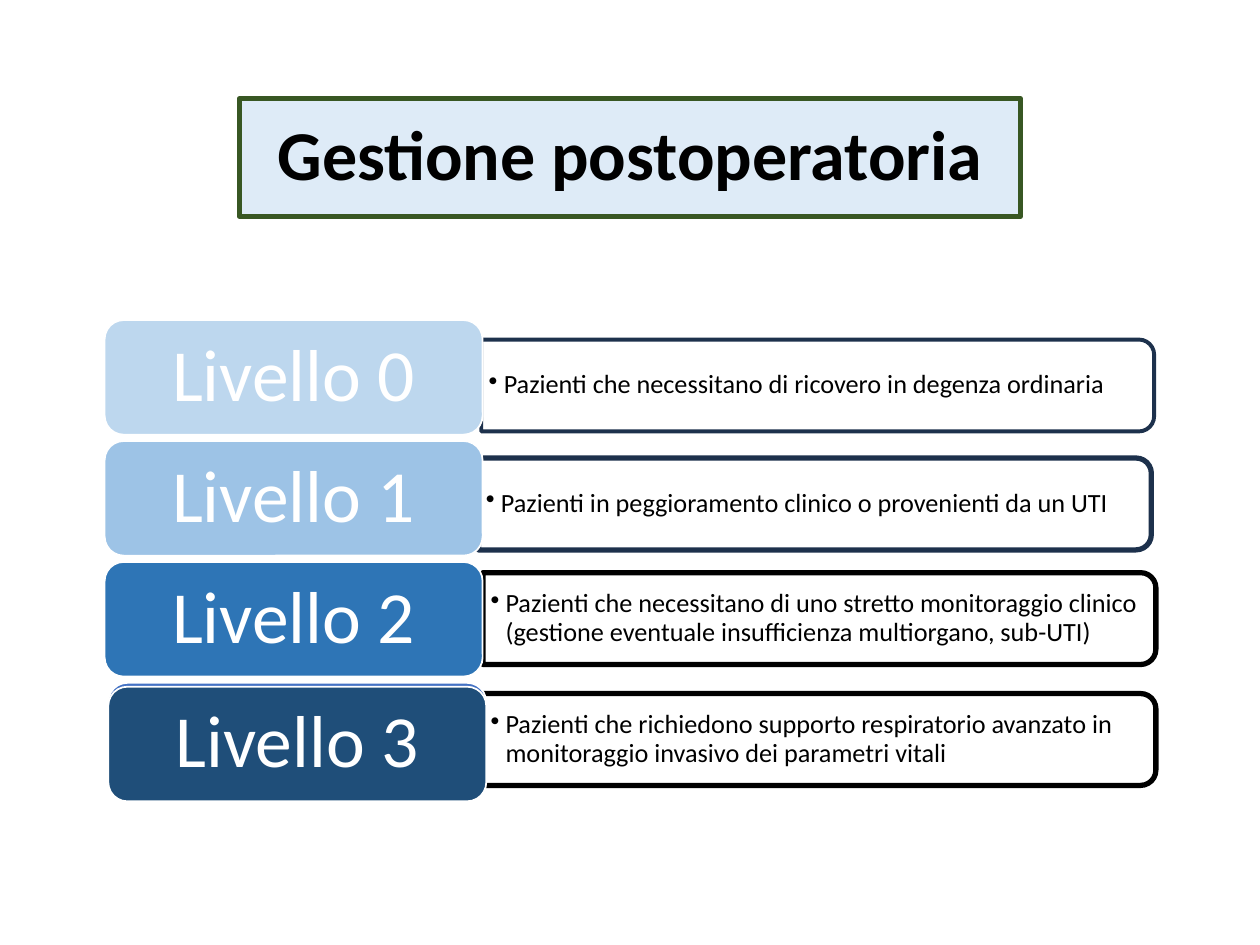
from lxml import etree
from pptx import Presentation
from pptx.dml.color import RGBColor
from pptx.enum.shapes import MSO_SHAPE
from pptx.enum.text import MSO_ANCHOR, MSO_AUTO_SIZE, PP_ALIGN
from pptx.oxml.ns import qn
from pptx.util import Pt

ROUNDED = MSO_SHAPE.ROUNDED_RECTANGLE
ROUND_TOP = MSO_SHAPE.ROUND_2_SAME_RECTANGLE
MIDDLE = MSO_ANCHOR.MIDDLE
NO_AUTOFIT = MSO_AUTO_SIZE.NONE
LEFT, CENTER = PP_ALIGN.LEFT, PP_ALIGN.CENTER

TITLE_ONLY = 5
BAR_WIDTH, BAR_HEIGHT = 384.5, 52.5
TEXT_WIDTH, TEXT_HEIGHT = 381.6, 47.5
LABEL_WIDTH, LABEL_HEIGHT = 216, 65.5

# Label, label left, top and fill; bar left, middle, line colour and width; text
LEVELS = [
    ("Livello 0", 59.8, 182.9, "BDD7EE", 275, 220.3, "1D314C", 2.25,
     "Pazienti che necessitano di ricovero in degenza ordinaria"),
    ("Livello 1", 59.8, 252, "9DC3E6", 273.4, 288, "1D314C", 3,
     "Pazienti in peggioramento clinico o provenienti da un UTI"),
    ("Livello 2", 59.8, 321.1, "2E75B6", 276, 353.5, "000000", 3,
     "Pazienti che necessitano di uno stretto monitoraggio clinico "
     "(gestione eventuale insufficienza multiorgano, sub-UTI)"),
    ("Livello 3", 61.9, 392.4, "1F4E79", 276, 422.6, "000000", 3,
     "Pazienti che richiedono supporto respiratorio avanzato in "
     "monitoraggio invasivo dei parametri vitali"),
]


def color(value):
    return RGBColor.from_string(value)


def write(shape, text, size=15, fill="000000", bold=False, align=LEFT,
          margins=(4.3, 2.2), bullet=False):
    frame = shape.text_frame
    frame.word_wrap = True
    frame.auto_size = NO_AUTOFIT
    frame.vertical_anchor = MIDDLE
    frame.margin_left = frame.margin_right = Pt(margins[0])
    frame.margin_top = frame.margin_bottom = Pt(margins[1])
    para = frame.paragraphs[0]
    para.alignment = align
    para.line_spacing = 0.9
    if bullet:
        properties = para._p.get_or_add_pPr()
        properties.set("marL", str(Pt(8.6)))
        properties.set("indent", str(Pt(-8.6)))
        etree.SubElement(properties, qn("a:buChar")).set("char", "•")
    span = para.add_run()
    span.text = text
    font = span.font
    font.name, font.size, font.bold = "Calibri", Pt(size), bold
    font.color.rgb = color(fill)


class LevelSlide:
    def __init__(self, page):
        self.page = page

    def paint(self, shape, fill, line, weight):
        if fill:
            shape.fill.solid()
            shape.fill.fore_color.rgb = color(fill)
        else:
            shape.fill.background()
        shape.line.color.rgb = color(line)
        shape.line.width = Pt(weight)

    def shape(self, kind, left, top, width, height, fill, line, weight):
        shape = self.page.shapes.add_shape(
            kind, Pt(left), Pt(top), Pt(width), Pt(height))
        shape.shadow.inherit = False
        self.paint(shape, fill, line, weight)
        return shape

    def title(self, text, left, top, width, height):
        box = self.page.shapes.title
        box.left, box.top = Pt(left), Pt(top)
        box.width, box.height = Pt(width), Pt(height)
        self.paint(box, "DEEBF7", "385723", 3)
        write(box, text, size=40, bold=True, align=CENTER, margins=(7.2, 3.6))

    def bar(self, left, middle, line, weight):
        # Upright shape turned a quarter, so its round corners face right
        bar = self.shape(ROUND_TOP, left + (BAR_WIDTH - BAR_HEIGHT) / 2,
                         middle - BAR_WIDTH / 2, BAR_HEIGHT, BAR_WIDTH,
                         None, line, weight)
        bar.rotation = 90

    def description(self, text, left, middle):
        box = self.page.shapes.add_textbox(
            Pt(left), Pt(middle - TEXT_HEIGHT / 2),
            Pt(TEXT_WIDTH), Pt(TEXT_HEIGHT))
        write(box, text, bullet=True)

    def label(self, left, top, fill, text=None):
        label = self.shape(ROUNDED, left, top, LABEL_WIDTH, LABEL_HEIGHT,
                           fill, "FFFFFF", 1)
        if text:
            write(label, text, size=42, fill="FFFFFF", align=CENTER,
                  margins=(15, 9))


def main():
    deck = Presentation()
    deck.slide_width, deck.slide_height = Pt(720), Pt(540)
    slide = LevelSlide(deck.slides.add_slide(deck.slide_layouts[TITLE_ONLY]))

    # Title
    slide.title("Gestione postoperatoria", 136.8, 56.4, 446.4, 67.2)

    # Care levels
    for (name, left, top, fill, bar_left, middle, line, weight,
         text) in LEVELS:
        slide.bar(bar_left, middle, line, weight)
        slide.description(text, bar_left, middle)
        if name == "Livello 3":
            # Blue edge showing above the last label
            slide.label(left, top - 2.2, "4472C4")
        slide.label(left, top, fill, name)

    deck.save("out.pptx")


if __name__ == "__main__":
    main()
